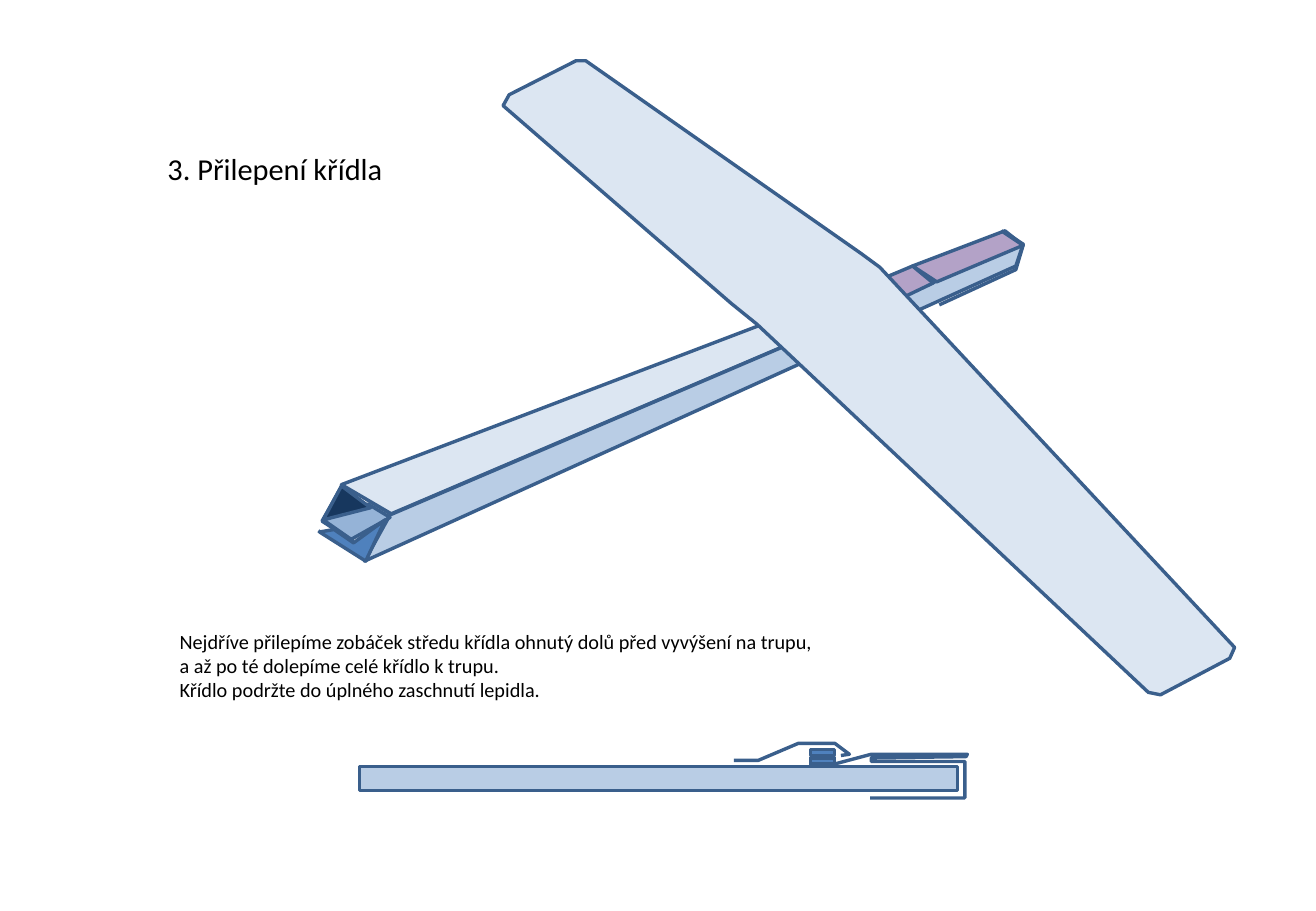
from dataclasses import dataclass

from pptx import Presentation
from pptx.dml.color import RGBColor
from pptx.enum.shapes import MSO_SHAPE
from pptx.enum.text import MSO_AUTO_SIZE
from pptx.shapes.autoshape import Shape
from pptx.shapes.shapetree import GroupShapes, SlideShapes
from pptx.util import Inches, Pt

RECTANGLE = MSO_SHAPE.RECTANGLE
GROW_TO_TEXT = MSO_AUTO_SIZE.SHAPE_TO_FIT_TEXT

COLUMNS, ROWS = 1083, 750
CELL = Inches(0.01)
BLANK_LAYOUT = 6


@dataclass(frozen=True)
class Theme:
    font: str = "Calibri"
    title_size: int = 18
    body_size: int = 12
    line_width: int = 2
    text: str = "000000"
    edge: str = "3A5F8C"
    top: str = "DCE6F2"
    side: str = "B9CDE5"
    inside: str = "95B3D7"
    opening: str = "17375E"
    block: str = "4F81BD"
    glue: str = "B3A2C7"


@dataclass(frozen=True)
class Bar:
    column: int
    row: int
    columns: int
    rows: int
    fill: str


@dataclass(frozen=True)
class Outline:
    points: tuple[tuple[int, int], ...]
    fill: str | None = None


@dataclass(frozen=True)
class Caption:
    column: int
    row: int
    columns: int
    rows: int
    size: int
    text: str


THEME = Theme()

SIDE_VIEW_BARS = (
    Bar(296, 631, 492, 20, THEME.side),
    Bar(667, 624, 20, 5, THEME.block),
    Bar(667, 617, 20, 5, THEME.block),
)

SIDE_VIEW_TAIL = Outline(((716, 657), (794, 657), (794, 627), (717, 627), (717, 624),
                          (795, 623), (796, 621), (717, 621), (687, 629)))
SIDE_VIEW_WING = Outline(((692, 622), (699, 621), (687, 612), (657, 612),
                          (624, 626), (604, 626)))

NOSE_FRAME = Outline(((262, 437), (301, 461), (323, 424), (282, 399), (265, 429), (291, 446)))
FUSELAGE_TOP = Outline(((281, 399), (827, 191), (842, 201), (322, 423)), THEME.top)
FUSELAGE_SIDE = Outline(((321, 424), (842, 201), (836, 219), (300, 462)), THEME.side)
NOSE_INSIDE = Outline(((266, 428), (303, 415), (321, 426), (289, 444)), THEME.inside)
NOSE_OPENING = Outline(((266, 428), (305, 418), (281, 400)), THEME.opening)
NOSE_FLAP = Outline(((263, 438), (275, 436), (291, 447), (317, 428), (301, 462)), THEME.block)
TAIL_GLUE = Outline(((827, 190), (842, 202), (771, 232), (751, 219)), THEME.glue)
WING_GLUE = Outline(((751, 219), (768, 233), (745, 244), (725, 230)), THEME.glue)
TAIL_EDGE = Outline(((773, 251), (836, 222), (842, 202), (824, 190)))
WING = Outline(((602, 250), (623, 267), (945, 570), (955, 572), (1012, 542), (1016, 533),
                (724, 220), (709, 209), (482, 50), (474, 50), (419, 78), (414, 87)), THEME.top)

OUTLINES = (SIDE_VIEW_TAIL, NOSE_FRAME, FUSELAGE_TOP, FUSELAGE_SIDE, NOSE_INSIDE,
            NOSE_OPENING, NOSE_FLAP, TAIL_GLUE, WING_GLUE, TAIL_EDGE, WING, SIDE_VIEW_WING)

CAPTIONS = (
    Caption(128, 119, 199, 40, THEME.title_size, "3. Přilepení křídla"),
    Caption(138, 513, 545, 71, THEME.body_size,
            "Nejdříve přilepíme zobáček středu křídla ohnutý dolů před vyvýšení na trupu,\n"
            "a až po té dolepíme celé křídlo k trupu.\n"
            "Křídlo podržte do úplného zaschnutí lepidla."),
)


def paint(shape: Shape, fill: str | None) -> None:
    shape.shadow.inherit = False
    shape.line.color.rgb = RGBColor.from_string(THEME.edge)
    shape.line.width = Pt(THEME.line_width)
    if fill is None:
        shape.fill.background()
    else:
        shape.fill.solid()
        shape.fill.fore_color.rgb = RGBColor.from_string(fill)


def draw_bar(shapes: GroupShapes, bar: Bar) -> None:
    shape = shapes.add_shape(RECTANGLE, bar.column * CELL, bar.row * CELL,
                             bar.columns * CELL, bar.rows * CELL)
    paint(shape, bar.fill)


def draw_outline(shapes: GroupShapes, outline: Outline) -> None:
    start, *others = outline.points
    builder = shapes.build_freeform(*start, scale=CELL)
    builder.add_line_segments(others, close=outline.fill is not None)
    paint(builder.convert_to_shape(), outline.fill)


def write_caption(shapes: SlideShapes, caption: Caption) -> None:
    box = shapes.add_textbox(caption.column * CELL, caption.row * CELL,
                             caption.columns * CELL, caption.rows * CELL)
    frame = box.text_frame
    frame.text = caption.text
    frame.word_wrap = False
    frame.auto_size = GROW_TO_TEXT
    for para in frame.paragraphs:
        for span in para.runs:
            span.font.name = THEME.font
            span.font.size = Pt(caption.size)
            span.font.color.rgb = RGBColor.from_string(THEME.text)


def main() -> None:
    deck = Presentation()
    deck.slide_width = COLUMNS * CELL
    deck.slide_height = ROWS * CELL
    page = deck.slides.add_slide(deck.slide_layouts[BLANK_LAYOUT])
    glider = page.shapes.add_group_shape()
    for bar in SIDE_VIEW_BARS:
        draw_bar(glider.shapes, bar)
    for outline in OUTLINES:
        draw_outline(glider.shapes, outline)
    for caption in CAPTIONS:
        write_caption(page.shapes, caption)
    deck.save("out.pptx")


if __name__ == "__main__":
    main()
